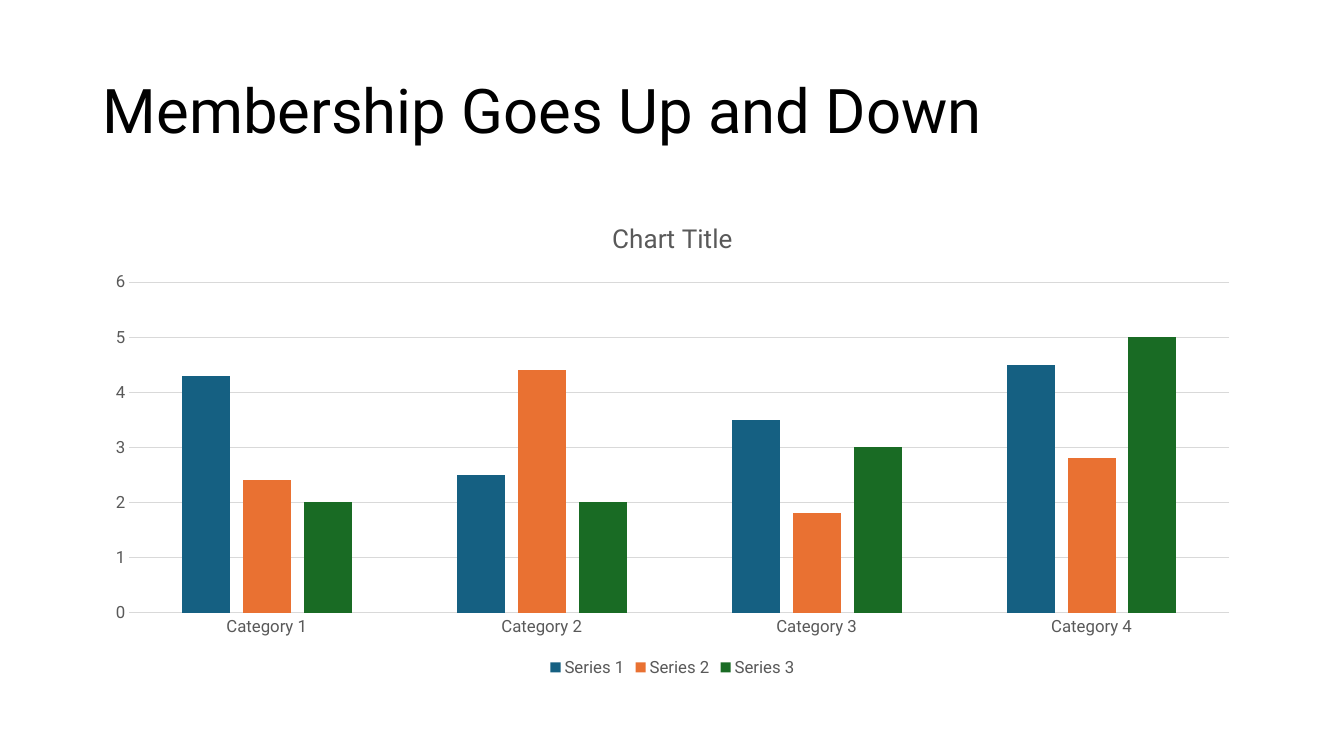
from pptx import Presentation
from pptx.chart.data import CategoryChartData
from pptx.dml.color import RGBColor
from pptx.enum.chart import XL_CHART_TYPE, XL_LEGEND_POSITION, XL_TICK_MARK
from pptx.enum.text import MSO_ANCHOR
from pptx.util import Inches, Pt

TITLE = "Membership Goes Up and Down"
CHART_TITLE = "Chart Title"
CATEGORIES = ["Category 1", "Category 2", "Category 3", "Category 4"]
SERIES = [
    ("Series 1", (4.3, 2.5, 3.5, 4.5), "156082"),
    ("Series 2", (2.4, 4.4, 1.8, 2.8), "E97132"),
    ("Series 3", (2, 2, 3, 5), "196B24"),
]
FONT, BLACK, GRAY, RULE = "Roboto", "000000", "595959", "D9D9D9"
LEFT, WIDTH = Inches(0.92), Inches(11.5)


def rgb(code):
    return RGBColor.from_string(code)


def style_font(font, size, color):
    font.name = FONT
    font.size = Pt(size)
    font.bold = False
    font.color.rgb = rgb(color)


def style_line(line):
    line.color.rgb = rgb(RULE)
    line.width = Pt(0.75)


def add_title(s):
    tf = s.shapes.add_textbox(LEFT, Inches(0.4), WIDTH, Inches(1.45)).text_frame
    tf.word_wrap = True
    tf.vertical_anchor = MSO_ANCHOR.MIDDLE
    tf.text = TITLE
    p = tf.paragraphs[0]
    p.line_spacing = 0.9
    style_font(p.runs[0].font, 44, BLACK)


def add_membership_chart(s):
    data = CategoryChartData()
    data.categories = CATEGORIES
    for name, values, _ in SERIES:
        data.add_series(name, values)
    chart = s.shapes.add_chart(XL_CHART_TYPE.COLUMN_CLUSTERED, LEFT, Inches(2),
                               WIDTH, Inches(4.76), data).chart
    style_font(chart.font, 12, GRAY)

    chart.has_title = True
    tf = chart.chart_title.text_frame
    tf.text = CHART_TITLE
    style_font(tf.paragraphs[0].runs[0].font, 18.6, GRAY)
    chart.chart_title.include_in_layout = False

    chart.has_legend = True
    chart.legend.position = XL_LEGEND_POSITION.BOTTOM
    chart.legend.include_in_layout = False
    style_font(chart.legend.font, 12, GRAY)

    for axis in (chart.category_axis, chart.value_axis):
        axis.major_tick_mark = axis.minor_tick_mark = XL_TICK_MARK.NONE
        style_font(axis.tick_labels.font, 12, GRAY)
    style_line(chart.category_axis.format.line)
    chart.value_axis.format.line.fill.background()
    style_line(chart.value_axis.major_gridlines.format.line)

    plot = chart.plots[0]
    plot.vary_by_categories = False
    plot.gap_width = 219
    plot.overlap = -27
    for series, (_, _, color) in zip(plot.series, SERIES):
        series.format.fill.solid()
        series.format.fill.fore_color.rgb = rgb(color)


def main():
    prs = Presentation()
    prs.slide_width, prs.slide_height = Inches(13.33), Inches(7.5)
    s = prs.slides.add_slide(prs.slide_layouts[6])
    add_title(s)
    add_membership_chart(s)
    prs.save("out.pptx")


if __name__ == "__main__":
    main()
